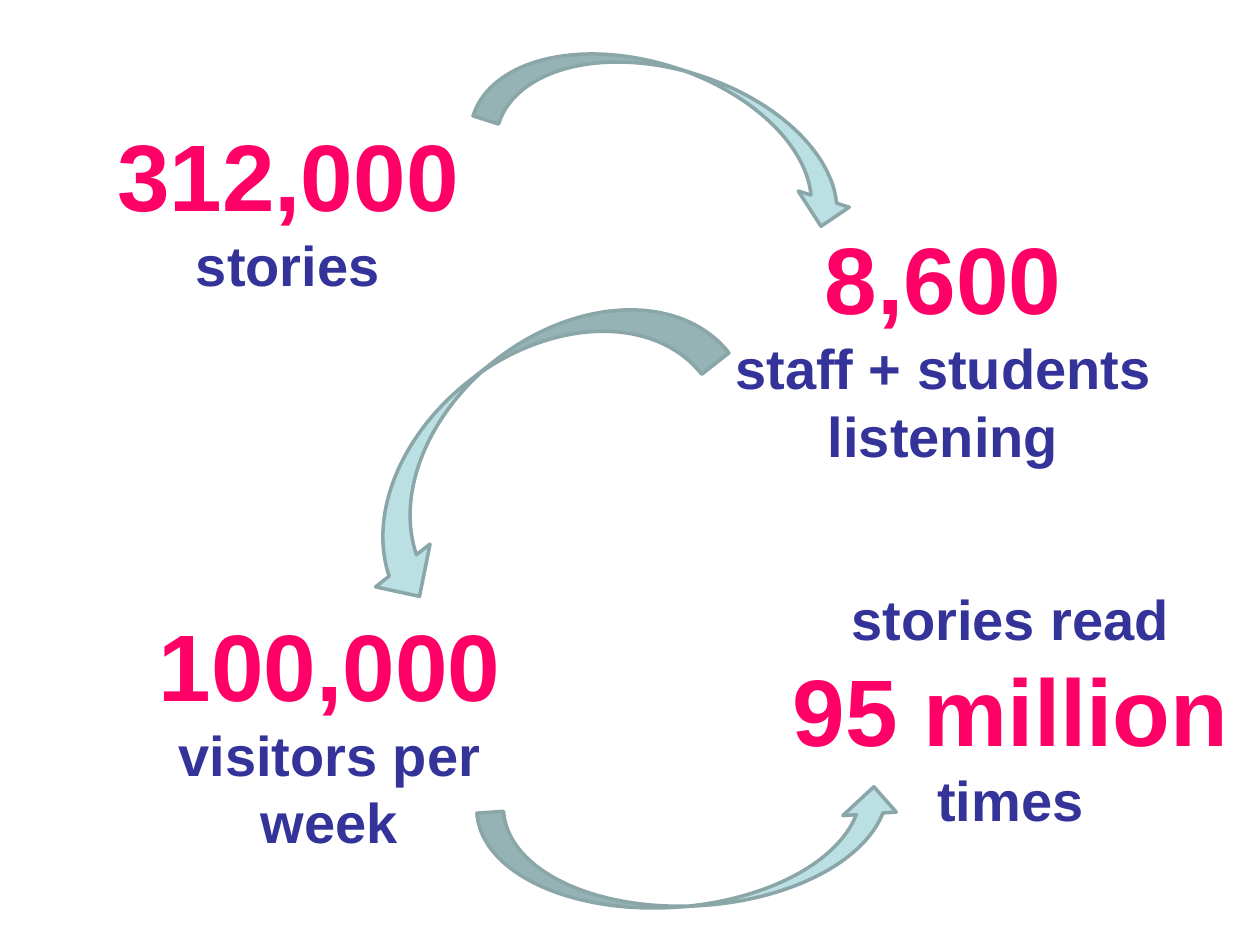
from typing import NamedTuple

from pptx import Presentation
from pptx.dml.color import RGBColor
from pptx.enum.shapes import MSO_SHAPE
from pptx.enum.text import MSO_AUTO_SIZE, PP_ALIGN
from pptx.util import Inches, Pt

COLORS = {
    "figure": "FF0066",
    "caption": "333399",
    "arrow": "BBE0E3",
    "outline": "8AA6A8",
}
FIGURE_SIZE = 54
CAPTION_SIZE = 32


class Box(NamedTuple):
    left: float
    top: float
    width: float
    height: float


class Statistic(NamedTuple):
    box: Box
    figure: str
    below: str
    above: str = ""


class Arrow(NamedTuple):
    box: Box
    rotation: float
    flip: str = ""


STATISTICS = [
    Statistic(Box(0.59, 0.88, 3.39, 1.55), "312,000", "stories"),
    Statistic(Box(0.92, 4.77, 3.39, 2.09), "100,000", "visitors per week"),
    Statistic(Box(6.16, 4.59, 3.72, 2.09), "95 million", "times", above="stories read"),
    Statistic(Box(5.24, 1.7, 4.49, 2.09), "8,600", "staff + students listening"),
]
ARROWS = [
    Arrow(Box(4.94, -0.57, 0.85, 3.11), 287.6),
    Arrow(Box(5.07, 5.08, 0.85, 3.37), 86.2, "flipV"),
    Arrow(Box(3.56, 1.72, 1.1, 3.4), 51.8, "flipH"),
]


def rgb(name: str) -> RGBColor:
    return RGBColor.from_string(COLORS[name])


def write_line(paragraph, text: str, *, size: float, color: str,
               font: str = "Arial", bold: bool = True) -> None:
    paragraph.alignment = PP_ALIGN.CENTER
    run = paragraph.add_run()
    run.text = text
    run.font.name = font
    run.font.size = Pt(size)
    run.font.bold = bold
    run.font.color.rgb = rgb(color)


def draw_statistic(slide, statistic: Statistic) -> None:
    """Stack the large figure between its optional captions."""
    frame = slide.shapes.add_textbox(*map(Inches, statistic.box)).text_frame
    frame.word_wrap = True
    frame.auto_size = MSO_AUTO_SIZE.SHAPE_TO_FIT_TEXT
    lines = [
        (statistic.above, CAPTION_SIZE, "caption"),
        (statistic.figure, FIGURE_SIZE, "figure"),
        (statistic.below, CAPTION_SIZE, "caption"),
    ]
    shown = [line for line in lines if line[0]]
    for index, (text, size, color) in enumerate(shown):
        paragraph = frame.add_paragraph() if index else frame.paragraphs[0]
        write_line(paragraph, text, size=size, color=color)


def draw_arrow(slide, arrow: Arrow) -> None:
    shape = slide.shapes.add_shape(MSO_SHAPE.CURVED_LEFT_ARROW, *map(Inches, arrow.box))
    shape.rotation = arrow.rotation
    if arrow.flip:
        shape._element.spPr.xfrm.set(arrow.flip, "1")
    shape.shadow.inherit = False
    shape.fill.solid()
    shape.fill.fore_color.rgb = rgb("arrow")
    shape.line.color.rgb = rgb("outline")
    shape.line.width = Pt(2)


def main() -> None:
    deck = Presentation()
    deck.slide_width = Inches(10)
    deck.slide_height = Inches(7.5)
    slide = deck.slides.add_slide(deck.slide_layouts[6])
    for statistic in STATISTICS:
        draw_statistic(slide, statistic)
    for arrow in ARROWS:
        draw_arrow(slide, arrow)
    deck.save("out.pptx")


if __name__ == "__main__":
    main()
